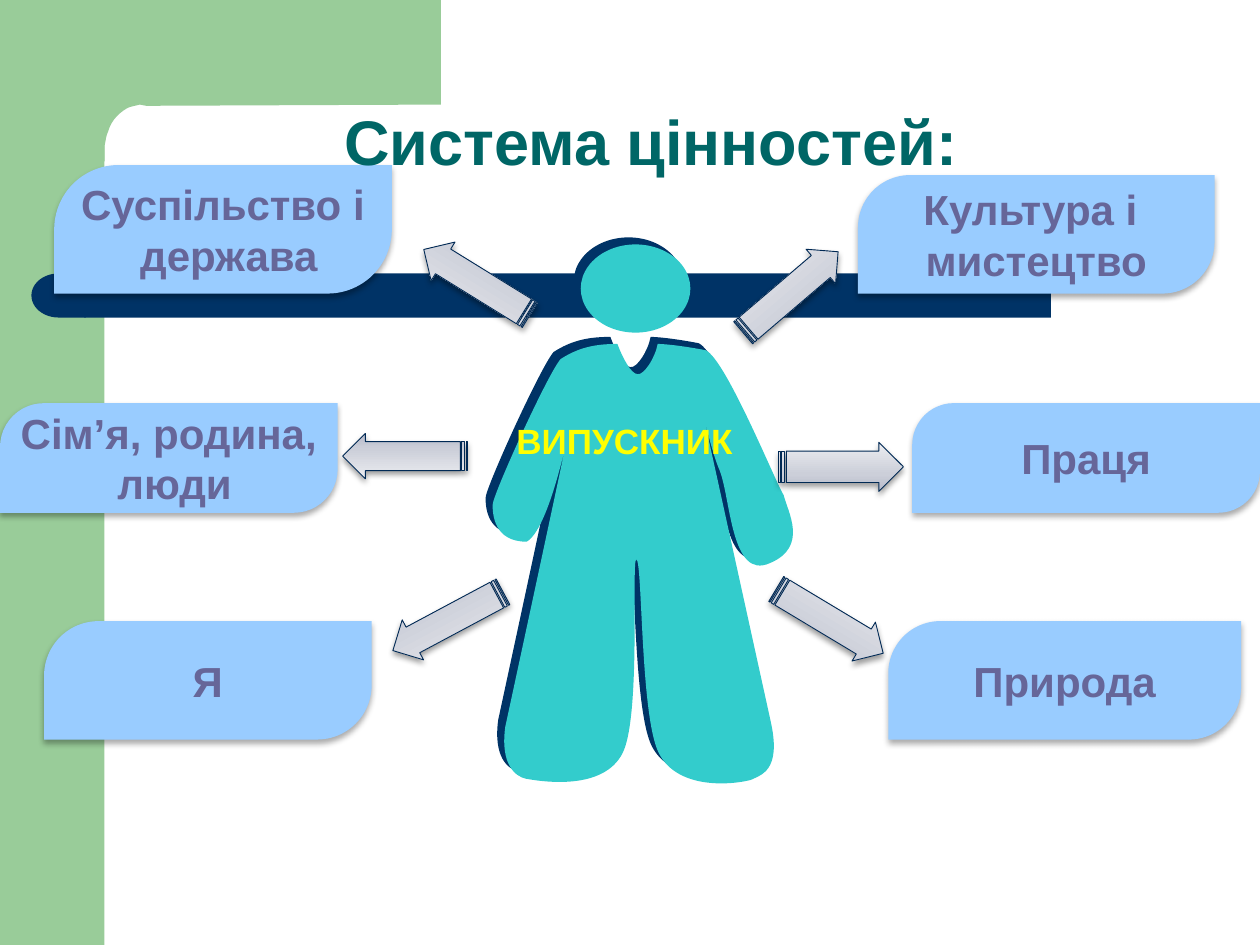
from lxml import etree
from pptx import Presentation
from pptx.dml.color import RGBColor
from pptx.enum.shapes import MSO_SHAPE
from pptx.enum.text import MSO_ANCHOR, PP_ALIGN
from pptx.oxml.ns import qn
from pptx.util import Inches, Pt

RECT = MSO_SHAPE.RECTANGLE
ROUND = MSO_SHAPE.ROUNDED_RECTANGLE
DELAY = MSO_SHAPE.FLOWCHART_DELAY
OVAL = MSO_SHAPE.OVAL
LEAF = MSO_SHAPE.ROUND_2_DIAG_RECTANGLE
ARROW = MSO_SHAPE.STRIPED_RIGHT_ARROW
CENTER = PP_ALIGN.CENTER
TOP, MIDDLE, BOTTOM = MSO_ANCHOR.TOP, MSO_ANCHOR.MIDDLE, MSO_ANCHOR.BOTTOM

GREEN, NAVY, TEAL, SKY = "99CC99", "003366", "33CCCC", "99CCFF"
BODY_SHADE = (NAVY, 100, 0, 5.7, 225)
LEAF_SHADE = ("000000", 32, 3.5, 2.2, 90)
ARROW_SHADE = ("000000", 38, 3.5, 2, 90)
STEEL = [(0, "B6BACA"), (35, "CCCFD9"), (100, "ECEDF1")]

CORNER = [
    (3.5, 0), (3.5, 0.83), (1.16, 0.84), (1.11, 0.83), (1.03, 0.85),
    (1, 0.86, 0.96, 0.89, 0.93, 0.92), (0.9, 0.95, 0.87, 1, 0.86, 1.04),
    (0.84, 1.08, 0.84, 1.12, 0.83, 1.16), (0.83, 1.28), (0.5, 1.28),
    (0.5, 0.83), (0.5, 0), (3.5, 0),
]
BODY = [
    (5.22, 2.73), (5.2, 2.84, 5.11, 2.98, 5.06, 2.97),
    (5.01, 2.97, 4.94, 2.84, 4.9, 2.73), (4.72, 2.73, 4.59, 2.76, 4.45, 2.85),
    (4.35, 2.96, 3.9, 3.95, 3.91, 4.01), (3.91, 4.08, 3.92, 4.3, 4.18, 4.3),
    (4.39, 4.18, 4.57, 3.15, 4.57, 3.15), (4.52, 3.41, 4.01, 5.77, 4.01, 5.77),
    (3.97, 6.07, 4.09, 6.16, 4.17, 6.18), (4.33, 6.21, 4.79, 6.27, 4.94, 5.98),
    (5.09, 5.69, 5.01, 4.44, 5.05, 4.44), (5.1, 4.44, 5.08, 5.69, 5.23, 5.98),
    (5.38, 6.27, 5.81, 6.23, 5.96, 6.19), (6.04, 6.15, 6.2, 6.12, 6.12, 5.74),
    (5.55, 3.15), (5.48, 2.81, 5.61, 3.5, 5.71, 3.73),
    (5.8, 3.95, 5.8, 4.61, 6.11, 4.47), (6.42, 4.34, 6.25, 4.06, 6.22, 3.93),
    (6.16, 3.84, 5.76, 2.85, 5.6, 2.78), (5.34, 2.73, 5.22, 2.73, 5.22, 2.73),
]
VALUES = [
    (6.81, 1.39, 2.83, 0.94, 0.44, ["Культура і ", "мистецтво"]),
    (7.24, 3.2, 2.76, 0.87, 0.38, ["Праця"]),
    (7.05, 4.93, 2.8, 0.94, 0.44, ["Природа"]),
    (0.35, 4.93, 2.6, 0.94, 0.46, ["Я"]),
    (0, 3.2, 2.68, 0.87, 0.4, ["Сім’я, родина,", " люди"]),
    (0.43, 1.31, 2.68, 1.02, 0.5, ["Суспільство і", " держава"]),
]
ARROWS = [
    (5.78, 2.14, 0.36, 319.5), (6.18, 3.51, 0.39, 0), (6.09, 4.75, 0.36, 31),
    (3.06, 4.75, 0.36, 151.9), (2.72, 3.44, 0.36, 180),
]


def rgb(code):
    """Turn a hex string into a colour."""
    return RGBColor.from_string(code)


def add_color(parent, code):
    """Append an sRGB colour element and return it."""
    return etree.SubElement(parent, qn("a:srgbClr"), val=code)


def paint(shape, fill, shade=None):
    """Give a shape a plain fill or none, no line and an optional shadow."""
    if fill:
        shape.fill.solid()
        shape.fill.fore_color.rgb = rgb(fill)
    else:
        shape.fill.background()
    shape.line.fill.background()
    shape.shadow.inherit = False
    if shade:
        code, alpha, blur, dist, angle = shade
        effects = shape._element.spPr.find(qn("a:effectLst"))
        outer = etree.SubElement(
            effects, qn("a:outerShdw"), blurRad=str(Pt(blur)), dist=str(Pt(dist)),
            dir=str(angle * 60000), algn="ctr", rotWithShape="0")
        etree.SubElement(add_color(outer, code), qn("a:alpha"), val=str(alpha * 1000))


def add_preset(slide, kind, box, fill, shade=None, bends=(), flip=False):
    """Add a painted preset shape."""
    shape = slide.shapes.add_shape(kind, *map(Inches, box))
    paint(shape, fill, shade)
    for i, bend in enumerate(bends):
        shape.adjustments[i] = bend
    if flip:
        shape._element.spPr.find(qn("a:xfrm")).set("flipH", "1")
    return shape


def add_outline(slide, steps, fill, shade=None):
    """Add a closed freeform of lines and cubic curves."""
    first, *rest = [(Inches(x), Inches(y))
                    for step in steps for x, y in zip(step[::2], step[1::2])]
    pen = slide.shapes.build_freeform(*first)
    pen.add_line_segments(rest, close=True)
    shape = pen.convert_to_shape()
    lines = iter(shape._element.spPr.findall(".//" + qn("a:lnTo")))
    for step in steps[1:]:
        line = next(lines)
        if len(step) == 6:
            line.tag = qn("a:cubicBezTo")
            for _ in range(2):
                extra = next(lines)
                line.append(extra[0])
                extra.getparent().remove(extra)
    paint(shape, fill, shade)


def write(shape, lines, size, color, anchor=TOP, wrap=True, spacing=None, edge=None):
    """Write centred bold lines into a shape."""
    frame = shape.text_frame
    frame.word_wrap = wrap
    frame.vertical_anchor = anchor
    for i, line in enumerate(lines):
        para = frame.add_paragraph() if i else frame.paragraphs[0]
        para.alignment = CENTER
        if spacing:
            para.line_spacing = spacing
        run = para.add_run()
        run.text = line
        font = run.font
        font.name, font.size, font.bold = "Arial", Pt(size), True
        font.color.rgb = rgb(color)
        if edge:
            stroke = etree.Element(qn("a:ln"), w=str(Pt(0.83)))
            add_color(etree.SubElement(stroke, qn("a:solidFill")), edge)
            run._r.get_or_add_rPr().insert(0, stroke)


def add_value(slide, x, y, width, height, bend, lines):
    """Add a leaf-shaped value box."""
    leaf = add_preset(slide, LEAF, (x, y, width, height), SKY, LEAF_SHADE, (bend, 0))
    write(leaf, lines, 24, "666699", anchor=MIDDLE, wrap=False, edge="29C8C8")


def add_arrow(slide, x, y, height, turn):
    """Add a striped arrow with a steel gradient."""
    box = (x, y, 0.99, height)
    arrow = add_preset(slide, ARROW, box, STEEL[0][1], ARROW_SHADE, (0.64, 0.5))
    arrow.rotation = turn
    arrow.fill.gradient()
    arrow.fill.gradient_angle = 90
    stops = arrow._element.spPr.find(".//" + qn("a:gsLst"))
    for stop in list(stops):
        stops.remove(stop)
    for place, code in STEEL:
        add_color(etree.SubElement(stops, qn("a:gs"), pos=str(place * 1000)), code)
    arrow.line.color.rgb = rgb("002954")
    arrow.line.width = Pt(0.5)


def main():
    """Build the slide and save it."""
    deck = Presentation()
    deck.slide_width, deck.slide_height = Inches(10), Inches(7.5)
    slide = deck.slides.add_slide(deck.slide_layouts[6])
    add_preset(slide, RECT, (0, 0, 0.83, 7.5), GREEN)
    add_outline(slide, CORNER, GREEN)
    add_preset(slide, ROUND, (0.67, 2.17, 7.67, 0.35), NAVY, bends=(0,))
    add_preset(slide, DELAY, (0.25, 2.17, 0.43, 0.35), NAVY, flip=True)
    add_arrow(slide, 3.29, 2.06, 0.36, 211.7)
    add_preset(slide, OVAL, (4.61, 1.94, 0.87, 0.7), TEAL, BODY_SHADE, flip=True)
    add_outline(slide, BODY, TEAL, BODY_SHADE)
    label = slide.shapes.add_textbox(*map(Inches, (3.5, 3.28, 2.99, 0.77)))
    write(label, ["ВИПУСКНИК "], 20, "FFFF00")
    for value in VALUES:
        add_value(slide, *value)
    for arrow in ARROWS:
        add_arrow(slide, *arrow)
    title = add_preset(slide, ROUND, (0.83, 0.44, 8.67, 1.1), None, bends=(0.22,))
    write(title, ["Система цінностей:"], 36, "006666", anchor=BOTTOM, spacing=0.9)
    deck.save("out.pptx")


if __name__ == "__main__":
    main()
